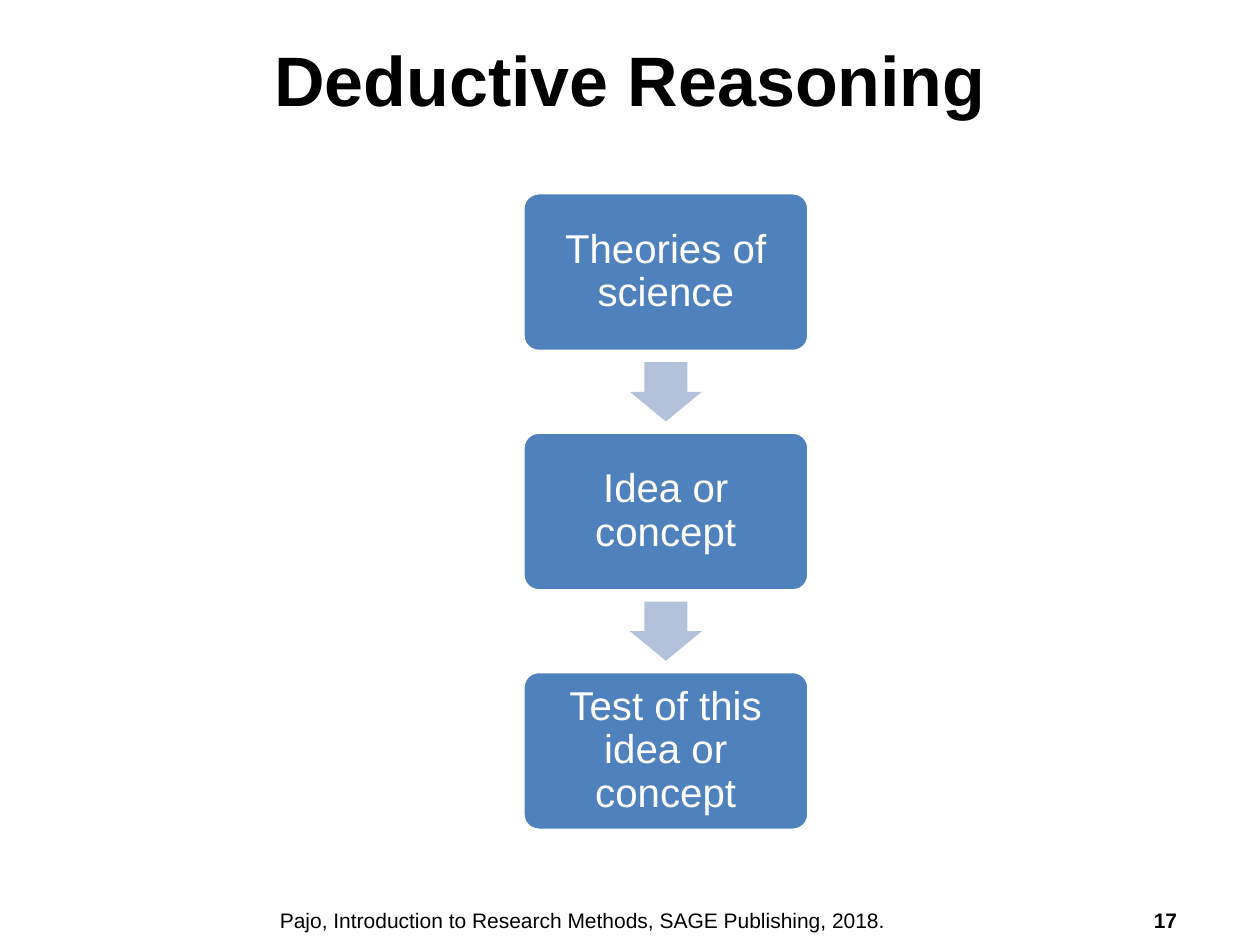
import pptx
import pptx.util
import pptx.dml.color
import pptx.enum.shapes
import pptx.enum.text

Inches, Pt = pptx.util.Inches, pptx.util.Pt
MSO_SHAPE = pptx.enum.shapes.MSO_SHAPE


def rgb(value):
    return pptx.dml.color.RGBColor.from_string(value)


def write(sp, text, size, color, bold=False):
    tf = sp.text_frame
    tf.word_wrap = True
    tf.vertical_anchor = pptx.enum.text.MSO_ANCHOR.MIDDLE
    p = tf.paragraphs[0]
    p.alignment = pptx.enum.text.PP_ALIGN.CENTER
    r = p.add_run()
    r.text = text
    r.font.name = "Arial"
    r.font.size = Pt(size)
    r.font.bold = bold
    r.font.color.rgb = rgb(color)
    return tf


prs = pptx.Presentation()
prs.slide_width, prs.slide_height = Inches(10), Inches(7.5)
s = prs.slides.add_slide(prs.slide_layouts[6])

# Title, footer and slide number
for text, x, y, w, h, size, bold in [
    ("Deductive Reasoning", 0.5, 0, 9, 1.25, 40, True),
    ("Pajo, Introduction to Research Methods, SAGE Publishing, 2018.",
     0.5, 7.1, 8.25, 0.4, 12, False),
    ("17", 9, 7.1, 0.5, 0.4, 12, True),
]:
    sp = s.shapes.add_textbox(Inches(x), Inches(y), Inches(w), Inches(h))
    write(sp, text, size, "000000", bold)

# Flow of steps, top to bottom, with an arrow centred in each gap
steps = ["Theories of science", "Idea or concept", "Test of this idea or concept"]
left, top, box_w, box_h, pitch = 4.15, 1.53, 2.27, 1.26, 1.9
arrow_w, arrow_h = 0.57, 0.47

for i, step in enumerate(steps):
    y = top + i * pitch
    sp = s.shapes.add_shape(MSO_SHAPE.ROUNDED_RECTANGLE, Inches(left), Inches(y),
                            Inches(box_w), Inches(box_h))
    sp.adjustments[0] = 0.1
    sp.shadow.inherit = False
    sp.fill.solid()
    sp.fill.fore_color.rgb = rgb("4F81BD")
    sp.line.color.rgb = rgb("FFFFFF")
    sp.line.width = Pt(2)
    tf = write(sp, step, 23, "FFFFFF")
    tf.margin_left = tf.margin_right = tf.margin_top = tf.margin_bottom = Inches(0.1)
    tf.paragraphs[0].line_spacing = 0.9

    if i < len(steps) - 1:
        arrow_x = left + (box_w - arrow_w) / 2
        arrow_y = y + box_h + (pitch - box_h - arrow_h) / 2
        sp = s.shapes.add_shape(MSO_SHAPE.DOWN_ARROW, Inches(arrow_x), Inches(arrow_y),
                                Inches(arrow_w), Inches(arrow_h))
        sp.adjustments[0] = 0.6
        sp.adjustments[1] = 0.5
        sp.shadow.inherit = False
        sp.fill.solid()
        sp.fill.fore_color.rgb = rgb("B3C1DB")
        sp.line.fill.background()

prs.save("out.pptx")
